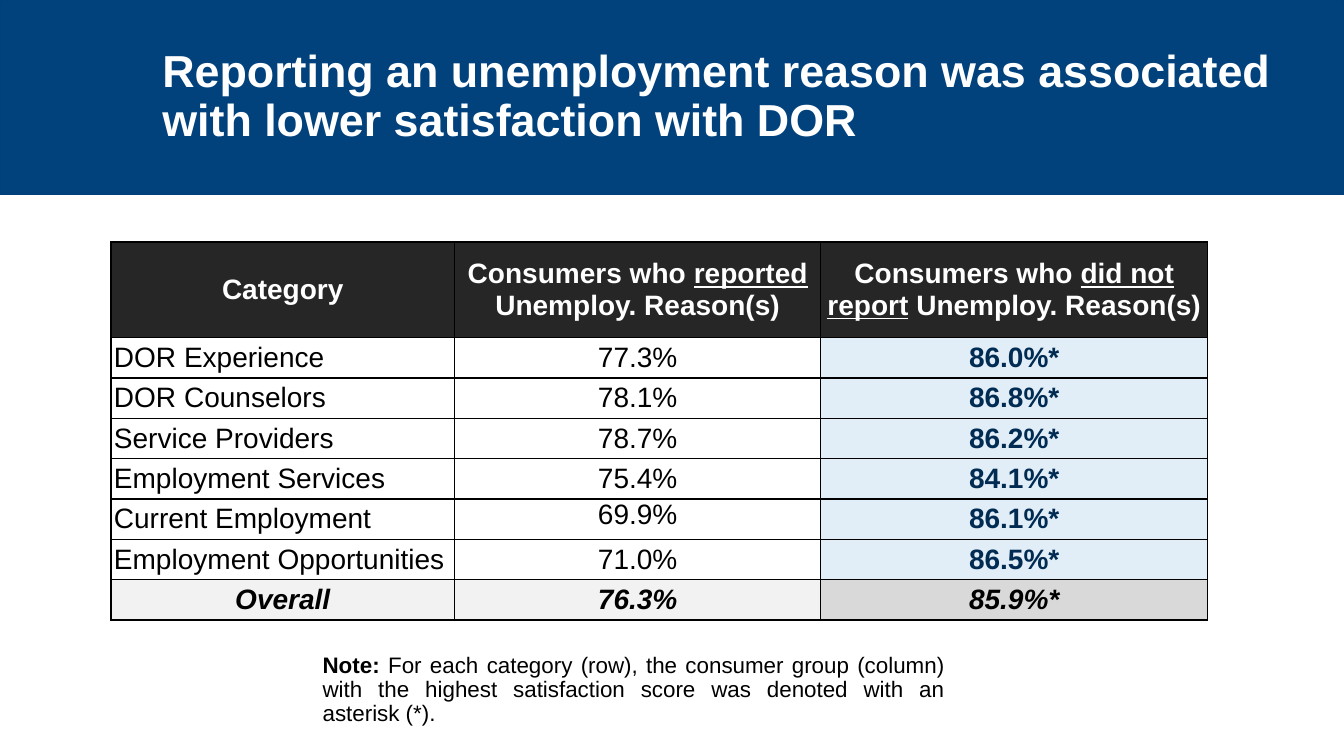
"""Build the slide that compares satisfaction by reported unemployment reason."""
from lxml.etree import SubElement
from pptx import Presentation
from pptx.dml.color import RGBColor
from pptx.enum.shapes import MSO_SHAPE as Shape
from pptx.enum.text import MSO_ANCHOR as Anchor, MSO_AUTO_SIZE as AutoSize, PP_ALIGN as Align
from pptx.oxml.ns import qn
from pptx.util import Emu, Pt

HEADINGS = [
    [[("Category", False)]],
    [[("Consumers who ", False), ("reported", True), (" Unemploy. Reason(s)", False)]],
    [[("Consumers who ", False), ("did not", True)],
     [("report", True), (" Unemploy. Reason(s)", False)]],
]
SCORES = [
    ("DOR Experience", "77.3%", "86.0%*"),
    ("DOR Counselors", "78.1%", "86.8%*"),
    ("Service Providers", "78.7%", "86.2%*"),
    ("Employment Services", "75.4%", "84.1%*"),
    ("Current Employment", "69.9%", "86.1%*"),
    ("Employment Opportunities", "71.0%", "86.5%*"),
]
OVERALL = ("Overall", "76.3%", "85.9%*")
NOTE_LABEL = "Note: "
NOTE = ("For each category (row), the consumer group (column) with the highest "
        "satisfaction score was denoted with an asterisk (*).")


def px(length):
    return Emu(length * 9144)


def rgb(code):
    return RGBColor.from_string(code)


class SlideBuilder:
    font_name = "Arial"
    white, black, navy = "FFFFFF", "000000", "002B52"

    def __init__(self, deck):
        self.slide = deck.slides.add_slide(deck.slide_layouts[1])
        self.title, self.body = self.slide.placeholders

    def set_text(self, frame, paragraphs, size, color, align, bold=None, italic=False, spacing=None):
        for index, spans in enumerate(paragraphs):
            para = frame.add_paragraph() if index else frame.paragraphs[0]
            para.alignment, para.line_spacing, para.space_before = align, spacing, Pt(0)
            para.font.name, para.font.size = self.font_name, Pt(size)
            para.font.bold, para.font.italic = bold, italic
            para.font.color.rgb = rgb(color)
            for text, underlined in spans:
                span = para.add_run()
                span.text = text
                if underlined:
                    span.font.underline = True

    def place(self, box, left, top, width, height, anchor):
        box.left, box.top, box.width, box.height = map(px, (left, top, width, height))
        frame = box.text_frame
        frame.word_wrap, frame.auto_size, frame.vertical_anchor = True, AutoSize.NONE, anchor
        return frame

    def add_band(self, width, height, fill, line):
        band = self.slide.shapes.add_shape(Shape.RECTANGLE, 0, 0, px(width), px(height))
        band.shadow.inherit = False
        band.fill.solid()
        band.fill.fore_color.rgb = rgb(fill)
        band.line.color.rgb, band.line.width = rgb(line), Pt(1)
        self.title.element.addprevious(band.element)

    def set_title(self, text, *bounds):
        frame = self.place(self.title, *bounds, Anchor.MIDDLE)
        self.set_text(frame, [[(text, False)]], 32, self.white, Align.LEFT, bold=True, spacing=0.9)

    def set_note(self, label, text, *bounds):
        frame = self.place(self.body, *bounds, Anchor.TOP)
        para = frame.paragraphs[0]
        properties = para._p.get_or_add_pPr()
        properties.set("marL", "0")
        properties.set("indent", "0")
        SubElement(properties, qn("a:buNone"))
        self.set_text(frame, [[(label, False), (text, False)]], 16, self.black, Align.JUSTIFY, spacing=0.9)
        para.runs[0].font.bold = True

    def add_grid(self, left, top, widths, heights):
        frame = self.slide.shapes.add_table(len(heights), len(widths), px(left), px(top),
                                            px(sum(widths)), px(sum(heights)))
        table = frame.table
        table.first_row = table.horz_banding = False
        for column, width in zip(table.columns, widths):
            column.width = px(width)
        for row, height in zip(table.rows, heights):
            row.height = px(height)
        return table

    def fill_cell(self, cell, paragraphs, fill, color, align=Align.CENTER, **style):
        cell.margin_left = cell.margin_right = px(3)
        cell.margin_top = cell.margin_bottom = 0
        cell.vertical_anchor = Anchor.MIDDLE
        properties = cell._tc.get_or_add_tcPr()
        for side in ("L", "R", "T", "B"):
            border = SubElement(properties, qn(f"a:ln{side}"), w=str(Pt(1)))
            paint = SubElement(border, qn("a:solidFill"))
            SubElement(paint, qn("a:srgbClr"), val=self.black)
        cell.fill.solid()
        cell.fill.fore_color.rgb = rgb(fill)
        self.set_text(cell.text_frame, paragraphs, 20, color, align, **style)

    def add_scores(self, left, top, widths, head_height, row_height):
        heights = [head_height] + [row_height] * (len(SCORES) + 1)
        table = self.add_grid(left, top, widths, heights)
        for column, heading in enumerate(HEADINGS):
            self.fill_cell(table.cell(0, column), heading, "262626", self.white, bold=True)
        columns = [(self.white, self.black, Align.LEFT, False),
                   (self.white, self.black, Align.CENTER, False),
                   ("E1EDF7", self.navy, Align.CENTER, True)]
        for row, values in enumerate(SCORES, 1):
            for column, (text, look) in enumerate(zip(values, columns)):
                fill, color, align, bold = look
                self.fill_cell(table.cell(row, column), [[(text, False)]], fill, color, align, bold=bold)
        for column, (text, fill) in enumerate(zip(OVERALL, ("F2F2F2", "F2F2F2", "D9D9D9"))):
            self.fill_cell(table.cell(len(SCORES) + 1, column), [[(text, False)]], fill, self.black,
                           bold=True, italic=True)
        table.cell(5, 1).vertical_anchor = Anchor.TOP


def main():
    deck = Presentation()
    deck.slide_width, deck.slide_height = px(1333), px(750)
    page = SlideBuilder(deck)
    page.add_band(1333, 193, "01417C", "01407A")
    page.set_title("Reporting an unemployment reason was associated with lower satisfaction with DOR",
                   151, 0, 1182, 193)
    page.add_scores(110, 240, (341, 363, 384), 95, 40)
    page.set_note(NOTE_LABEL, NOTE, 310, 644, 637, 83)
    deck.save("out.pptx")


if __name__ == "__main__":
    main()
